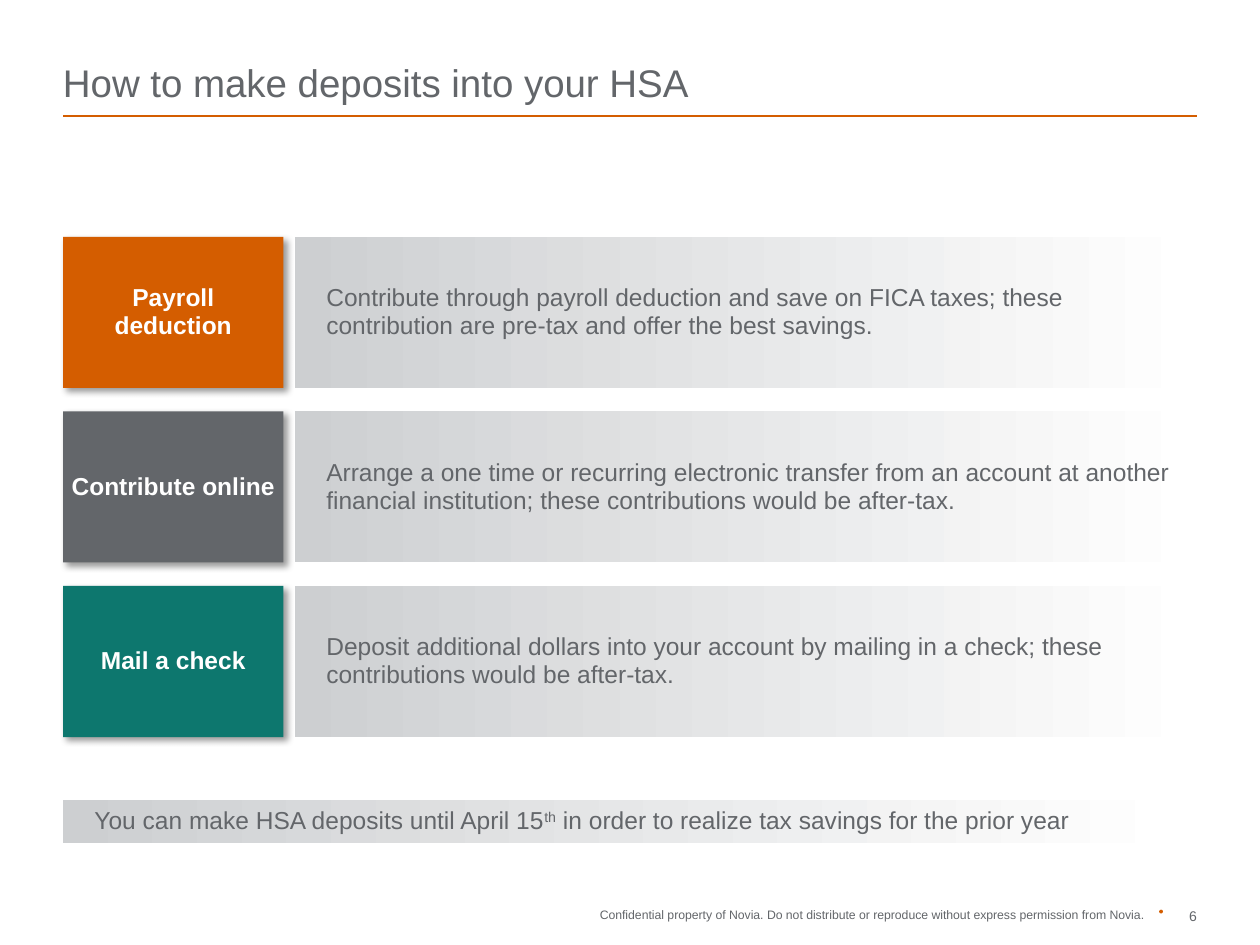
import pptx
import pptx.dml.color
import pptx.enum.shapes
import pptx.enum.text
import pptx.oxml
import pptx.oxml.ns
import pptx.util

Inches = pptx.util.Inches
Align = pptx.enum.text.PP_ALIGN
Anchor = pptx.enum.text.MSO_ANCHOR
Shape = pptx.enum.shapes.MSO_SHAPE

# Content
TITLE = "How to make deposits into your HSA"
METHODS = [
    ("Payroll\ndeduction", "D45D00",
     "Contribute through payroll deduction and save on FICA taxes; these "
     "contribution are pre-tax and offer the best savings."),
    ("Contribute online", "63666A",
     "Arrange a one time or recurring electronic transfer from an account at another "
     "financial institution; these contributions would be after-tax."),
    ("Mail a check", "0D776E",
     "Deposit additional dollars into your account by mailing in a check; these "
     "contributions would be after-tax."),
]
DEADLINE = [("You can make HSA deposits until April 15", 0), ("th", 30),
            (" in order to realize tax savings for the prior year", 0)]
FOOTER = ("Confidential property of Novia. Do not distribute or reproduce "
          "without express permission from Novia.")
PAGE_NUMBER = "6"

# Colours and grid, in inches
GRAY, ORANGE, WHITE, SILVER = "63666A", "D45D00", "FFFFFF", "CDCFD1"
WIDTH, HEIGHT, MARGIN = 10, 7.5, 0.5
CONTENT_WIDTH = WIDTH - 2 * MARGIN
FIRST_ROW, LAST_ROW, ROW_HEIGHT = 1.88, 4.65, 1.2
ROW_STEP = (LAST_ROW - FIRST_ROW) / (len(METHODS) - 1)
LABEL_WIDTH, LABEL_GAP = 1.75, 0.09
PANEL_LEFT = MARGIN + LABEL_WIDTH + LABEL_GAP
PANEL_INSETS = (0.25, 0.1, 0, 0.1)


def color(hex_string):
    return pptx.dml.color.RGBColor.from_string(hex_string)


def write(shape, text, size=14, ink=GRAY, bold=False, align=Align.LEFT,
          anchor=Anchor.MIDDLE, insets=(0, 0, 0, 0), line_spacing=0.95):
    """Write a string, or a list of (text, superscript percent) runs."""
    frame = shape.text_frame
    frame.word_wrap = True
    frame.vertical_anchor = anchor
    (frame.margin_left, frame.margin_top,
     frame.margin_right, frame.margin_bottom) = map(Inches, insets)
    paragraph = frame.paragraphs[0]
    paragraph.alignment = align
    paragraph.line_spacing = line_spacing
    runs = [(text, 0)] if isinstance(text, str) else text
    for words, raised in runs:
        for index, line in enumerate(words.split("\n")):
            if index:
                paragraph.add_line_break()
            run = paragraph.add_run()
            run.text = line
            run.font.name = "Arial"
            run.font.size = pptx.util.Pt(size)
            run.font.bold = bold
            run.font.color.rgb = color(ink)
            if raised:
                run.font._element.set("baseline", str(raised * 1000))


def add_text(slide, left, top, width, height, text, **style):
    box = slide.shapes.add_textbox(*map(Inches, (left, top, width, height)))
    write(box, text, **style)


def add_block(slide, left, top, width, height, fill, kind=Shape.RECTANGLE):
    """Add a borderless shape; a pair of colours makes a gradient."""
    shape = slide.shapes.add_shape(kind, *map(Inches, (left, top, width, height)))
    shape.shadow.inherit = False
    shape.line.fill.background()
    if isinstance(fill, str):
        shape.fill.solid()
        shape.fill.fore_color.rgb = color(fill)
    else:
        shape.fill.gradient()
        shape.fill.gradient_angle = 0
        for stop, shade in zip(shape.fill.gradient_stops, fill):
            stop.color.rgb = color(shade)
    return shape


def add_shadow(shape):
    effects = shape._element.spPr.find(pptx.oxml.ns.qn("a:effectLst"))
    effects.append(pptx.oxml.parse_xml(
        f'<a:outerShdw {pptx.oxml.ns.nsdecls("a")} blurRad="50800" dist="38100" '
        'dir="2700000" algn="tl" rotWithShape="0"><a:srgbClr val="000000">'
        '<a:alpha val="40000"/></a:srgbClr></a:outerShdw>'))


def main():
    presentation = pptx.Presentation()
    presentation.slide_width, presentation.slide_height = Inches(WIDTH), Inches(HEIGHT)
    slide = presentation.slides.add_slide(presentation.slide_layouts[6])

    # Title and rule
    rule = slide.shapes.add_connector(
        pptx.enum.shapes.MSO_CONNECTOR.STRAIGHT,
        *map(Inches, (MARGIN, 0.92, WIDTH - MARGIN, 0.92)))
    rule.line.color.rgb = color(ORANGE)
    rule.line.width = pptx.util.Pt(1)
    rule._element.spPr.append(pptx.oxml.parse_xml(
        f'<a:effectLst {pptx.oxml.ns.nsdecls("a")}/>'))
    add_text(slide, MARGIN, 0.17, CONTENT_WIDTH, 0.67, TITLE,
             size=22, anchor=Anchor.BOTTOM, line_spacing=0.9)

    # One row per deposit method
    for row, (name, fill, description) in enumerate(METHODS):
        top = FIRST_ROW + row * ROW_STEP
        panel = add_block(slide, PANEL_LEFT, top, WIDTH - MARGIN - PANEL_LEFT,
                          ROW_HEIGHT, (SILVER, WHITE))
        write(panel, description, insets=PANEL_INSETS)
        label = add_block(slide, MARGIN, top, LABEL_WIDTH, ROW_HEIGHT, fill)
        add_shadow(label)
        write(label, name, ink=WHITE, bold=True, align=Align.CENTER)

    # Deadline band
    band = add_block(slide, MARGIN, 6.35, 8.86, 0.34, (SILVER, WHITE))
    write(band, DEADLINE, insets=PANEL_INSETS)

    # Footer
    footer_style = dict(align=Align.RIGHT, anchor=Anchor.TOP, line_spacing=1.0)
    add_text(slide, 4.08, 7.2, 5, 0.12, FOOTER, size=7, **footer_style)
    add_block(slide, 9.2, 7.22, 0.03, 0.03, ORANGE, kind=Shape.OVAL)
    add_text(slide, 9.17, 7.2, 0.33, 0.17, PAGE_NUMBER, size=8, **footer_style)

    presentation.save("out.pptx")


if __name__ == "__main__":
    main()
